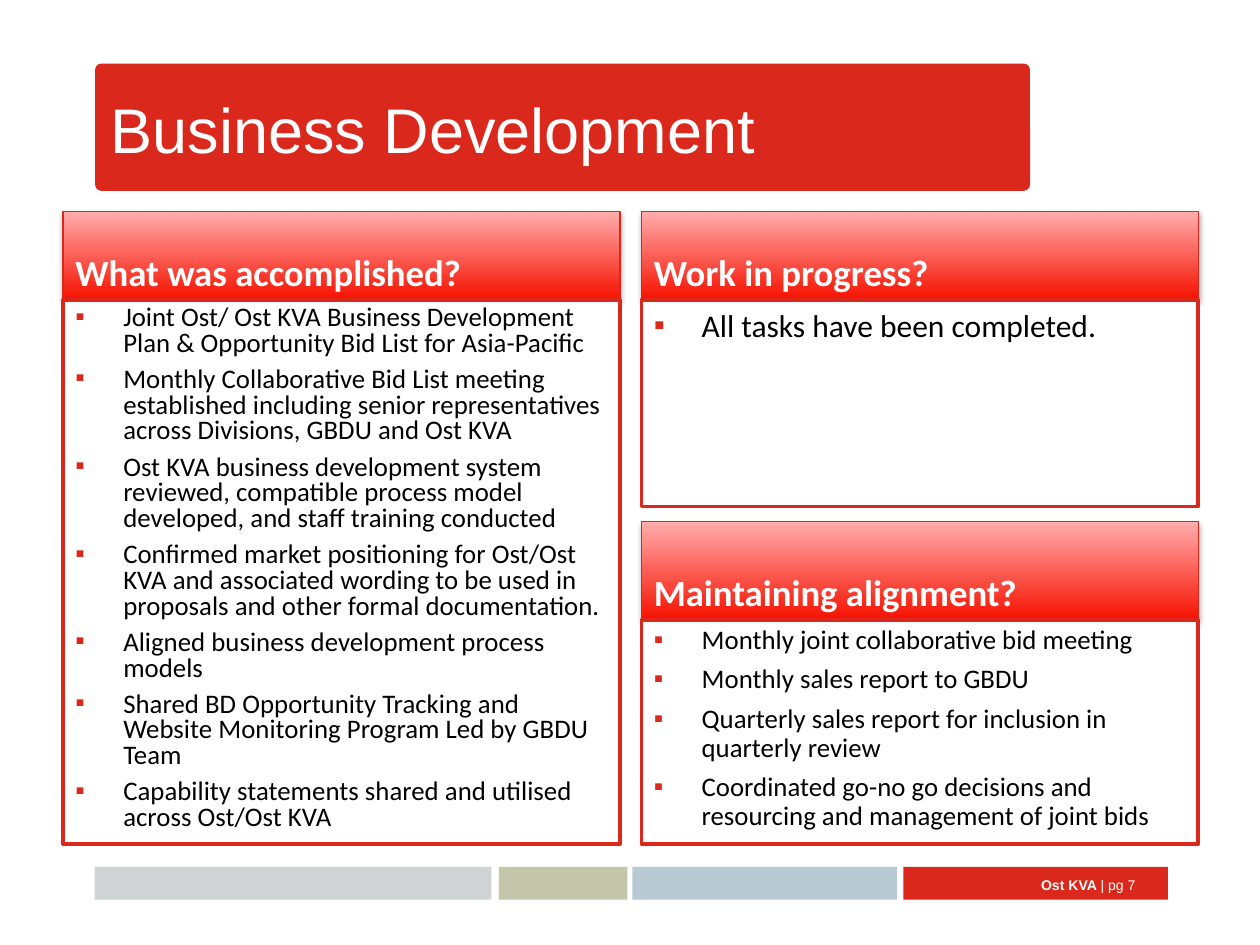
from lxml import etree
from pptx import Presentation
from pptx.dml.color import RGBColor
from pptx.enum.shapes import MSO_SHAPE
from pptx.enum.text import MSO_ANCHOR, MSO_AUTO_SIZE, PP_ALIGN
from pptx.oxml import parse_xml
from pptx.oxml.ns import nsdecls, qn
from pptx.util import Inches, Pt

RECT, ROUND = MSO_SHAPE.RECTANGLE, MSO_SHAPE.ROUNDED_RECTANGLE
TOP, MIDDLE, BOTTOM = MSO_ANCHOR.TOP, MSO_ANCHOR.MIDDLE, MSO_ANCHOR.BOTTOM
LEFT, RIGHT = PP_ALIGN.LEFT, PP_ALIGN.RIGHT
RED, WHITE, BLACK = "DA291C", "FFFFFF", "000000"
HEAD_DARK, HEAD_LIGHT = "F61100", "FFADAC"

# Content
TITLE = "Business Development"
FOOTER = [("Ost KVA ", True), ("| pg 7", False)]
FOOTER_BARS = [  # left, width, colour
    (0.75, 3.15, "D0D3D4"),
    (3.96, 1.02, "C3C6A8"),
    (5.02, 2.1, "B7C9D3"),
    (7.17, 2.1, RED),
]
PANELS = [
    dict(left=0.5, top=1.68, head=0.7, body=4.32, size=15.3, spacing=0.8,
         heading="What was accomplished?", items=[
             "Joint Ost/ Ost KVA Business Development Plan & Opportunity Bid List for Asia-Pacific",
             "Monthly Collaborative Bid List meeting established including senior "
             "representatives across Divisions, GBDU and Ost KVA",
             "Ost KVA business development system reviewed, compatible process model "
             "developed, and staff training conducted",
             "Confirmed market positioning for Ost/Ost KVA and associated wording to be used "
             "in proposals and other formal documentation.",
             "Aligned business development process models",
             "Shared BD Opportunity Tracking and Website Monitoring Program Led by GBDU Team",
             "Capability statements shared and utilised across Ost/Ost KVA",
         ]),
    dict(left=5.09, top=1.68, head=0.7, body=1.64, size=18, spacing=1.0,
         heading="Work in progress?", items=["All tasks have been completed."]),
    dict(left=5.09, top=4.14, head=0.78, body=1.78, size=15.3, spacing=0.9,
         heading="Maintaining alignment?", items=[
             "Monthly joint collaborative bid meeting",
             "Monthly sales report to GBDU",
             "Quarterly sales report for inclusion in quarterly review",
             "Coordinated go-no go decisions and resourcing and management of joint bids",
         ]),
]
PANEL_W = 4.42


def rgb(code):
    return RGBColor.from_string(code)


def add_box(slide, kind, left, top, width, height, fill=None, line=None, line_w=0.75):
    sp = slide.shapes.add_shape(kind, Inches(left), Inches(top), Inches(width), Inches(height))
    sp.shadow.inherit = False
    if fill:
        sp.fill.solid()
        sp.fill.fore_color.rgb = rgb(fill)
    if line:
        sp.line.color.rgb = rgb(line)
        sp.line.width = Pt(line_w)
    else:
        sp.line.fill.background()
    return sp


def add_bullet(p):
    pPr = p._p.get_or_add_pPr()
    pPr.set("marL", str(Inches(0.38)))
    pPr.set("indent", str(-Inches(0.38)))
    color = etree.SubElement(pPr, qn("a:buClr"))
    etree.SubElement(color, qn("a:srgbClr")).set("val", RED)
    etree.SubElement(pPr, qn("a:buFont")).set("typeface", "Arial")
    etree.SubElement(pPr, qn("a:buChar")).set("char", "▪")


def write(sp, paragraphs, size, font="Calibri", color=BLACK, bold=False, align=LEFT,
          anchor=TOP, spacing=None, before=0, bullets=False):
    """Fill a shape; each paragraph is a list of (text, bold) runs or a string."""
    tf = sp.text_frame
    tf.word_wrap = True
    tf.auto_size = MSO_AUTO_SIZE.NONE
    tf.vertical_anchor = anchor
    for i, runs in enumerate(paragraphs):
        p = tf.add_paragraph() if i else tf.paragraphs[0]
        p.alignment = align
        p.space_before = Pt(before if i else 0)
        if spacing:
            p.line_spacing = spacing
        if bullets:
            add_bullet(p)
        for text, is_bold in [(runs, bold)] if isinstance(runs, str) else runs:
            r = p.add_run()
            r.text = text
            r.font.size, r.font.name, r.font.bold = Pt(size), font, is_bold
            r.font.color.rgb = rgb(color)


def add_heading_style(sp):
    """Red vertical gradient with a soft shadow below."""
    sp.fill.gradient()
    sp.fill.gradient_angle = 90
    for stop, color in zip(sp.fill.gradient_stops, (HEAD_DARK, HEAD_LIGHT)):
        stop.color.rgb = rgb(color)
    effects = sp._element.spPr.find(qn("a:effectLst"))
    effects.append(parse_xml(
        f'<a:outerShdw {nsdecls("a")} blurRad="{Pt(3.1)}" dist="{Pt(1.8)}" dir="5400000" '
        'rotWithShape="0"><a:srgbClr val="000000"><a:alpha val="35000"/></a:srgbClr>'
        '</a:outerShdw>'))


def add_panel(slide, left, top, head, body, size, spacing, heading, items):
    sp = add_box(slide, RECT, left, top, PANEL_W, head, line=RED)
    add_heading_style(sp)
    write(sp, [heading], 21, color=WHITE, bold=True, anchor=BOTTOM)
    sp.text_frame.paragraphs[0].space_after = Pt(8)
    sp = add_box(slide, RECT, left, top + head, PANEL_W, body, WHITE, RED, 2)
    write(sp, items, size, spacing=spacing, before=6, bullets=True)


def main():
    prs = Presentation()
    prs.slide_width, prs.slide_height = Inches(10), Inches(7.5)
    slide = prs.slides.add_slide(prs.slide_layouts[5])

    # Title on its banner
    banner = add_box(slide, ROUND, 0.76, 0.51, 7.41, 1, RED, RED)
    banner.adjustments[0] = 0.045
    title = slide.shapes.title
    title.left, title.top = Inches(0.78), Inches(0.51)
    title.width, title.height = Inches(7.38), Inches(1.01)
    write(title, [TITLE], 36, font="Arial", color=WHITE, anchor=MIDDLE)
    banner._element.addnext(title._element)

    # Footer
    for left, width, color in FOOTER_BARS:
        add_box(slide, RECT, left, 6.88, width, 0.26, color)
    footer = slide.shapes.add_textbox(Inches(7.82), Inches(6.82), Inches(1.29), Inches(0.4))
    write(footer, [FOOTER], 8, font="Arial", color=WHITE, align=RIGHT, anchor=MIDDLE)

    # Panels
    for panel in PANELS:
        add_panel(slide, **panel)

    prs.save("out.pptx")


if __name__ == "__main__":
    main()
